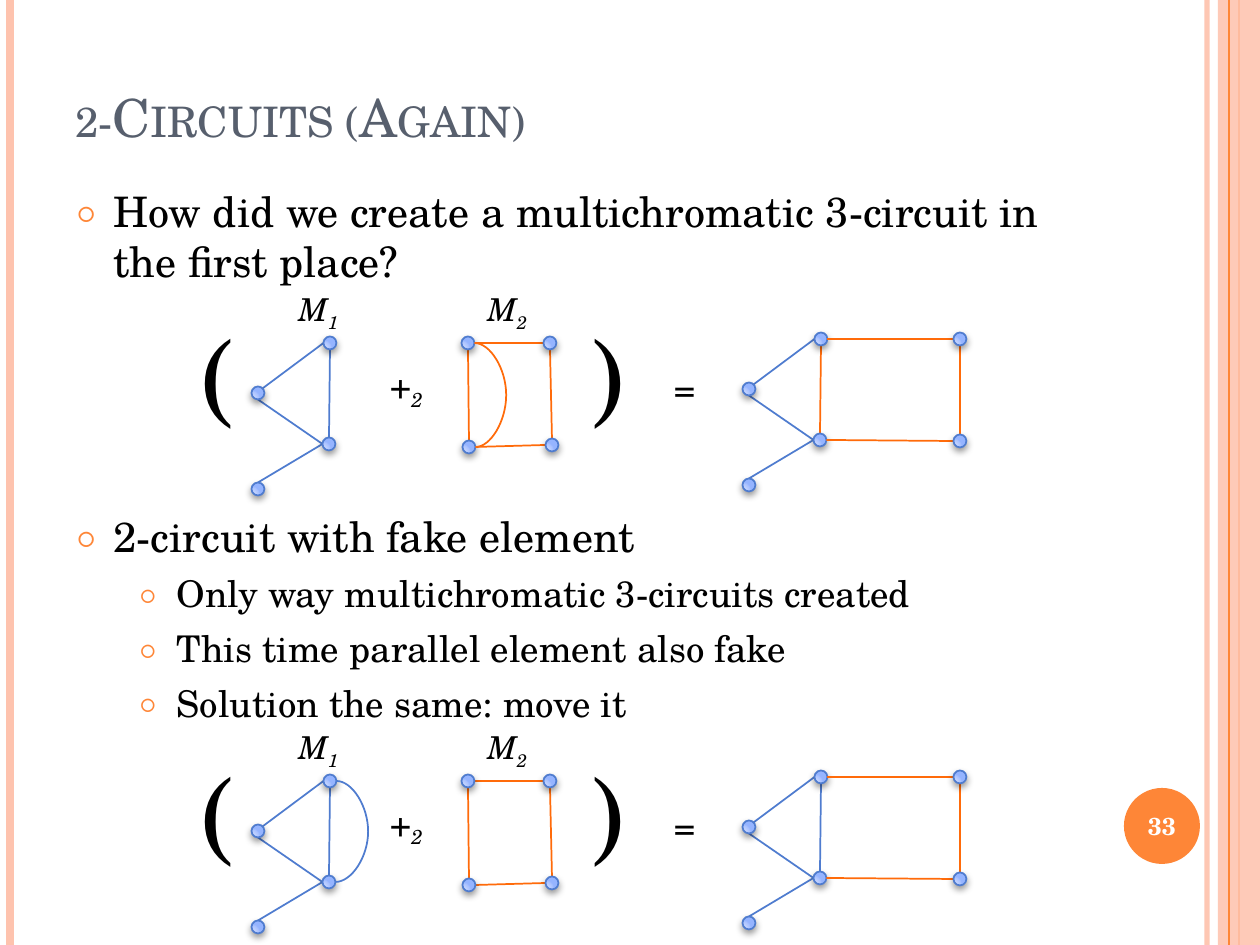
from dataclasses import dataclass

from pptx import Presentation
from pptx.dml.color import RGBColor
from pptx.enum.shapes import MSO_CONNECTOR as Link, MSO_SHAPE as Shape
from pptx.enum.text import MSO_ANCHOR as Anchor, MSO_AUTO_SIZE as Fit, PP_ALIGN as Align
from pptx.oxml import parse_xml
from pptx.oxml.ns import nsdecls, qn
from pptx.oxml.xmlchemy import OxmlElement as new_element
from pptx.util import Emu, Pt

EMU_PER_PX = 914400 / 126


@dataclass(frozen=True)
class Theme:
    """Colours, font and type sizes of the slide."""
    font: str = "TeX Gyre Schola"
    ink: str = "000000"
    heading: str = "575F6D"
    white: str = "FFFFFF"
    accent: str = "FE8637"
    pale: str = "FEC3AE"
    blue: str = "4F7CCF"
    orange: str = "FF6B0A"
    node_stops: tuple = ((0, "CFDCFF"), (30, "CBD9FF"), (75, "AFC6FF"), (100, "95B4FF"))
    title: int = 30
    body: tuple = (24, 21)
    label: int = 18
    operator: int = 20
    bracket: int = 60
    number: int = 14


THEME = Theme()
NODE = 13
BULGE = 32
SIDES = {"top": (0, -1), "bottom": (0, 1), "left": (-1, 0), "right": (1, 0),
         "corner": (0.7, -0.7)}


def px(*lengths):
    """Turn pixel lengths into EMU."""
    return [Emu(round(length * EMU_PER_PX)) for length in lengths]


def write(para, text, size, color=THEME.ink, bold=False, italic=False, **attributes):
    """Add a formatted run to a paragraph; extra keywords become run attributes."""
    span = para.add_run()
    span.text = text
    font = span.font
    font.name, font.size, font.bold, font.italic = THEME.font, Pt(size), bold, italic
    font.color.rgb = RGBColor.from_string(color)
    for name, value in attributes.items():
        span._r.get_or_add_rPr().set(name, value)


def set_alpha(color_parent, percent):
    """Make the solid colours inside an element partly transparent."""
    for color in color_parent.iter(qn("a:srgbClr")):
        alpha = new_element("a:alpha")
        alpha.set("val", str(percent * 1000))
        color.append(alpha)


def add_line(slide, start, end, color, width=1, kind=Link.STRAIGHT):
    """Draw a connector without a shadow."""
    line = slide.shapes.add_connector(kind, *px(*start, *end))
    line.line.color.rgb = RGBColor.from_string(color)
    line.line.width = Pt(width)
    line._element.spPr.append(new_element("a:effectLst"))
    return line


def add_solid(slide, kind, frame, color):
    """Draw a flat shape without an outline."""
    shape = slide.shapes.add_shape(kind, *px(*frame))
    shape.shadow.inherit = False
    shape.fill.solid()
    shape.fill.fore_color.rgb = RGBColor.from_string(color)
    shape.line.fill.background()
    return shape


def add_node(slide, center):
    """Draw a graph vertex with a radial gradient and a soft shadow."""
    x, y = center
    node = slide.shapes.add_shape(Shape.OVAL, *px(x - NODE / 2, y - NODE / 2, NODE, NODE))
    node.line.color.rgb = RGBColor.from_string(THEME.blue)
    node.line.width = Pt(1)
    node.shadow.inherit = False
    stops = "".join(f'<a:gs pos="{at * 1000}"><a:srgbClr val="{color}"/></a:gs>'
                    for at, color in THEME.node_stops)
    properties = node._element.spPr
    properties.insert(2, parse_xml(
        f'<a:gradFill {nsdecls("a")}><a:gsLst>{stops}</a:gsLst><a:path path="circle">'
        '<a:fillToRect l="5000" t="100000" r="120000" b="10000"/></a:path></a:gradFill>'))
    properties.find(qn("a:effectLst")).append(parse_xml(
        f'<a:outerShdw {nsdecls("a")} blurRad="50800" dist="25400" dir="5400000" '
        'rotWithShape="0"><a:srgbClr val="000000"><a:alpha val="40000"/></a:srgbClr>'
        '</a:outerShdw>'))


def rim(center, side):
    """Return the point on a node's rim at the named side."""
    return tuple(at + step * NODE / 2 for at, step in zip(center, SIDES[side]))


def add_edge(slide, first, first_side, second, second_side, color):
    """Join two nodes with a straight edge."""
    add_line(slide, rim(first, first_side), rim(second, second_side), color)


def add_loop(slide, upper, lower, color):
    """Draw a parallel edge that bulges to the right of two nodes."""
    start, end = rim(upper, "right"), rim(lower, "right")
    curve = add_line(slide, start, end, color, kind=Link.CURVE)
    guide = new_element("a:gd")
    guide.set("name", "adj1")
    guide.set("fmla", f"val {round(BULGE / (end[0] - start[0]) * 100000)}")
    curve._element.spPr.find(qn("a:prstGeom")).get_or_add_avLst().append(guide)


def add_triangle(slide, x, y, shared_color):
    """Draw a triangle with a tail; return its top and hub nodes."""
    top, hub, apex, tail = (x, y), (x - 1, y + 101), (x - 72, y + 50), (x - 72, y + 146)
    add_edge(slide, apex, "corner", top, "left", THEME.blue)
    add_edge(slide, apex, "bottom", hub, "left", THEME.blue)
    add_edge(slide, hub, "left", tail, "top", THEME.blue)
    add_edge(slide, top, "bottom", hub, "top", shared_color)
    for node in (top, hub, apex, tail):
        add_node(slide, node)
    return top, hub


def add_bracket_edges(slide, top, hub, far_top, far_bottom):
    """Draw the three edges and two far nodes that close a square."""
    add_edge(slide, far_top, "left", top, "right", THEME.orange)
    add_edge(slide, far_bottom, "left", hub, "right", THEME.orange)
    add_edge(slide, far_bottom, "top", far_top, "bottom", THEME.orange)
    add_node(slide, far_top)
    add_node(slide, far_bottom)


def add_label(slide, frame, text, size, sub="", wrap=False, italic=True):
    """Place a symbol with an optional subscript."""
    box = slide.shapes.add_textbox(*px(*frame)).text_frame
    box.word_wrap = wrap
    box.auto_size = Fit.SHAPE_TO_FIT_TEXT
    para = box.paragraphs[0]
    write(para, text, size, italic=italic)
    if sub:
        write(para, sub, size, italic=italic, baseline="-25000")


def add_equation(slide, y, loop_on_triangle):
    """Draw one 2-sum row whose top nodes lie at y."""
    top, hub = add_triangle(slide, 330, y, THEME.blue)
    upper, lower = (468, y), (469, y + 104)
    add_edge(slide, upper, "bottom", lower, "top", THEME.orange)
    add_bracket_edges(slide, upper, lower, (550, y), (552, y + 102))
    add_node(slide, upper)
    add_node(slide, lower)
    if loop_on_triangle:
        add_loop(slide, top, hub, THEME.blue)
    else:
        add_loop(slide, upper, lower, THEME.orange)
    shared_color = THEME.blue if loop_on_triangle else THEME.orange
    top, hub = add_triangle(slide, 821, y - 4, shared_color)
    add_bracket_edges(slide, top, hub, (960, y - 4), (960, y + 98))
    for x, sub in ((286, "1"), (475, "2")):
        add_label(slide, (x, y - 59, 71, 50), "M", THEME.label, sub)
    for x, symbol in ((189, "("), (577, ")")):
        add_label(slide, (x, y - 38, 84, 140), symbol, THEME.bracket, wrap=True, italic=False)
    add_label(slide, (378, y + 14, 67, 55), "+", THEME.operator, "2")
    add_label(slide, (662, y + 17, 54, 55), "=", THEME.operator)


def place(holder, frame, anchor):
    """Move a placeholder and return its text frame."""
    holder.left, holder.top, holder.width, holder.height = px(*frame)
    box = holder.text_frame
    box.word_wrap, box.auto_size, box.vertical_anchor = True, Fit.NONE, anchor
    return box


def fill_list(holder, frame, items):
    """Fill a placeholder with (level, text) bullets."""
    box = place(holder, frame, Anchor.TOP)
    for index, (level, text) in enumerate(items):
        para = box.add_paragraph() if index else box.paragraphs[0]
        para.level, para.space_before = level, Pt(6)
        properties = para._p.get_or_add_pPr()
        properties.set("marL", str(px(38 + 63 * level)[0]))
        properties.set("indent", str(px(-38)[0]))
        for tag in (f'buClr {nsdecls("a")}><a:srgbClr val="{THEME.accent}"/></a:buClr>',
                    f'buSzPct {nsdecls("a")} val="70000"/>',
                    f'buFont {nsdecls("a")} typeface="{THEME.font}"/>',
                    f'buChar {nsdecls("a")} char="○"/>'):
            properties.append(parse_xml(f"<a:{tag}"))
        write(para, text, THEME.body[level])


def add_frame(slide):
    """Draw the side bars and the page number badge."""
    for x, color, width, alpha in ((1207, THEME.pale, 3, 93), (10, THEME.pale, 4.5, 100),
                                   (1239, THEME.accent, 1.5, 100)):
        bar = add_line(slide, (x, 0), (x, 945), color, width)
        if alpha < 100:
            set_alpha(bar._element.spPr, alpha)
    band = add_solid(slide, Shape.RECTANGLE, (1218, 0, 42, 945), THEME.pale)
    set_alpha(band._element.spPr, 87)
    add_line(slide, (1229, 0), (1229, 945), THEME.accent, 0.75)
    add_solid(slide, Shape.OVAL, (1124, 788, 76, 76), THEME.accent)
    box = slide.shapes.add_textbox(*px(1120, 790, 84, 72)).text_frame
    box.word_wrap, box.vertical_anchor = True, Anchor.MIDDLE
    box.paragraphs[0].alignment = Align.CENTER
    write(box.paragraphs[0], "33", THEME.number, THEME.white, bold=True)


def main():
    """Build and save the slide."""
    deck = Presentation()
    deck.slide_width, deck.slide_height = px(1260, 945)
    page = deck.slides.add_slide(deck.slide_layouts.get_by_name("Two Content"))
    add_frame(page)
    title = place(page.shapes.title, (63, 38, 1029, 158), Anchor.MIDDLE).paragraphs[0]
    title.alignment = Align.LEFT
    write(title, "2-Circuits (Again)", THEME.title, THEME.heading, cap="small")
    fill_list(page.placeholders[1], (63, 179, 1029, 147),
              [(0, "How did we create a multichromatic 3-circuit in the first place?")])
    fill_list(page.placeholders[2], (63, 504, 1029, 233),
              [(0, "2-circuit with fake element"),
               (1, "Only way multichromatic 3-circuits created"),
               (1, "This time parallel element also fake"),
               (1, "Solution the same: move it")])
    add_equation(page, 343, loop_on_triangle=False)
    add_equation(page, 781, loop_on_triangle=True)
    deck.save("out.pptx")


if __name__ == "__main__":
    main()
